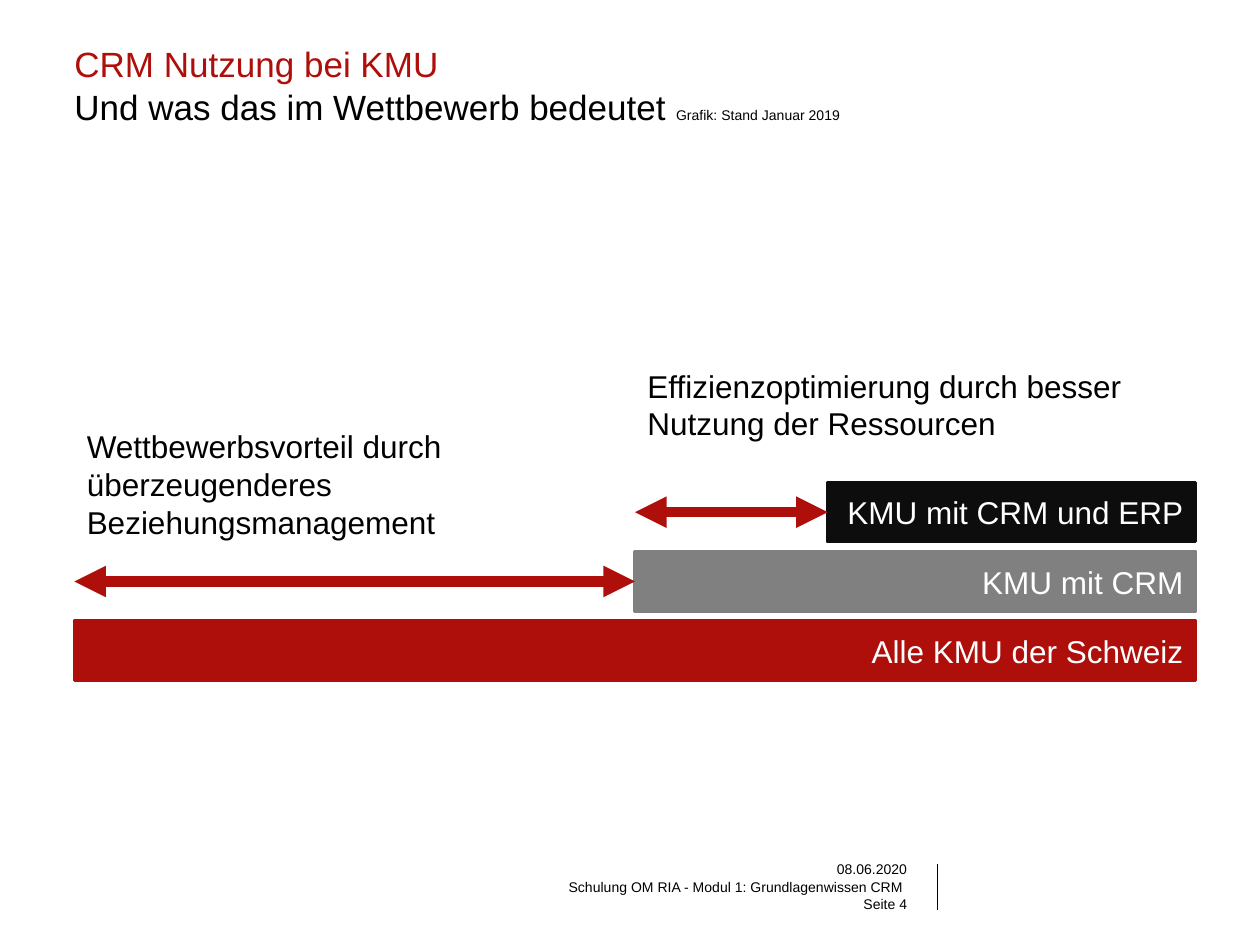
from lxml.etree import SubElement as Sub
from pptx import Presentation
from pptx.dml.color import RGBColor
from pptx.enum.shapes import MSO_CONNECTOR as Conn, MSO_SHAPE as Shape
from pptx.enum.text import MSO_ANCHOR as Anchor, PP_ALIGN as Align
from pptx.oxml.ns import qn
from pptx.util import Inches, Pt

# Content
RED, GREY, DARK, BLACK, WHITE = "AE0F0A", "808080", "0D0D0D", "000000", "FFFFFF"
TITLE = [
    ("CRM Nutzung bei KMU", 20, RED),
    ("Und was das im Wettbewerb bedeutet ", 20, BLACK),
    ("Grafik: Stand Januar 2019", 8, BLACK),
]
BARS = [  # text, left edge, fill, from the bottom up
    ("Alle KMU der Schweiz", 0.59, RED),
    ("KMU mit CRM", 5.04, GREY),
    ("KMU mit CRM und ERP", 6.57, DARK),
]
NOTES = [  # text, top, height; one per gap between neighbouring bars
    ("Wettbewerbsvorteil durch überzeugenderes Beziehungsmanagement", 3.34, 1.01),
    ("Effizienzoptimierung durch besser Nutzung der Ressourcen", 2.86, 0.71),
]
FOOT = ["08.06.2020", "Schulung OM RIA - Modul 1: Grundlagenwissen CRM ", "Seite 4"]

# Layout
LEFT, WIDTH = 0.59, 8.9
RIGHT = LEFT + WIDTH
BASE, STEP, BAR_H = 4.93, 0.55, 0.47
NOTE_W = WIDTH / 2
FOOT_TOP, FOOT_W, FOOT_H = 6.83, 6.61, 0.14


def rgb(code):
    return RGBColor.from_string(code)


def style(run, size, color):
    run.font.name = "Arial"
    run.font.size = Pt(size)
    run.font.color.rgb = rgb(color)


def write(shape, text, size, color, align=Align.LEFT):
    frame = shape.text_frame
    frame.word_wrap = True
    frame.text = text
    para = frame.paragraphs[0]
    para.alignment = align
    style(para.runs[0], size, color)
    return frame


def clear(frame):
    frame.margin_left = frame.margin_right = 0
    frame.margin_top = frame.margin_bottom = 0


def add_text(x, y, w, h, *text):
    box = slide.shapes.add_textbox(Inches(x), Inches(y), Inches(w), Inches(h))
    return write(box, *text)


def add_line(x1, y1, x2, y2, color, width, heads=False):
    line = slide.shapes.add_connector(
        Conn.STRAIGHT, Inches(x1), Inches(y1), Inches(x2), Inches(y2))
    line.line.color.rgb = rgb(color)
    line.line.width = Pt(width)
    props = line._element.spPr
    if heads:
        for end in ("a:headEnd", "a:tailEnd"):
            Sub(props.find(qn("a:ln")), qn(end), type="triangle")
    Sub(props, qn("a:effectLst"))


prs = Presentation()
prs.slide_width, prs.slide_height = Inches(10), Inches(7.5)
slide = prs.slides.add_slide(prs.slide_layouts[5])

# Title
title = slide.shapes.title
title.left, title.top = Inches(LEFT), Inches(0.32)
title.width, title.height = Inches(WIDTH), Inches(0.79)
frame = title.text_frame
clear(frame)
frame.word_wrap = True
frame.vertical_anchor = Anchor.TOP
para = frame.paragraphs[0]
para.alignment = Align.LEFT
para.line_spacing = Pt(25)
for i, (text, size, color) in enumerate(TITLE):
    if i == 1:
        para.add_line_break()
    run = para.add_run()
    run.text = text
    style(run, size, color)

# Footer
add_line(7.44, 6.86, 7.44, 7.22, BLACK, 0.75)
for i, text in enumerate(FOOT):
    clear(add_text(LEFT, FOOT_TOP + i * FOOT_H, FOOT_W, FOOT_H,
                   text, 8, BLACK, Align.RIGHT))

# Bars
for i, (text, x, color) in enumerate(BARS):
    bar = slide.shapes.add_shape(
        Shape.RECTANGLE, Inches(x), Inches(BASE - i * STEP),
        Inches(RIGHT - x), Inches(BAR_H))
    bar.shadow.inherit = False
    bar.fill.solid()
    bar.fill.fore_color.rgb = bar.line.color.rgb = rgb(color)
    bar.line.width = Pt(2)
    write(bar, text, 18, WHITE, Align.RIGHT).vertical_anchor = Anchor.MIDDLE

# Gap arrows with their notes
for i, (text, top, high) in enumerate(NOTES):
    x, end = BARS[i][1], BARS[i + 1][1]
    y = BASE - (i + 1) * STEP + BAR_H / 2
    add_line(end, y, x, y, RED, 6, heads=True)
    add_text(x, top, NOTE_W, high, text, 18, BLACK)

prs.save("out.pptx")
